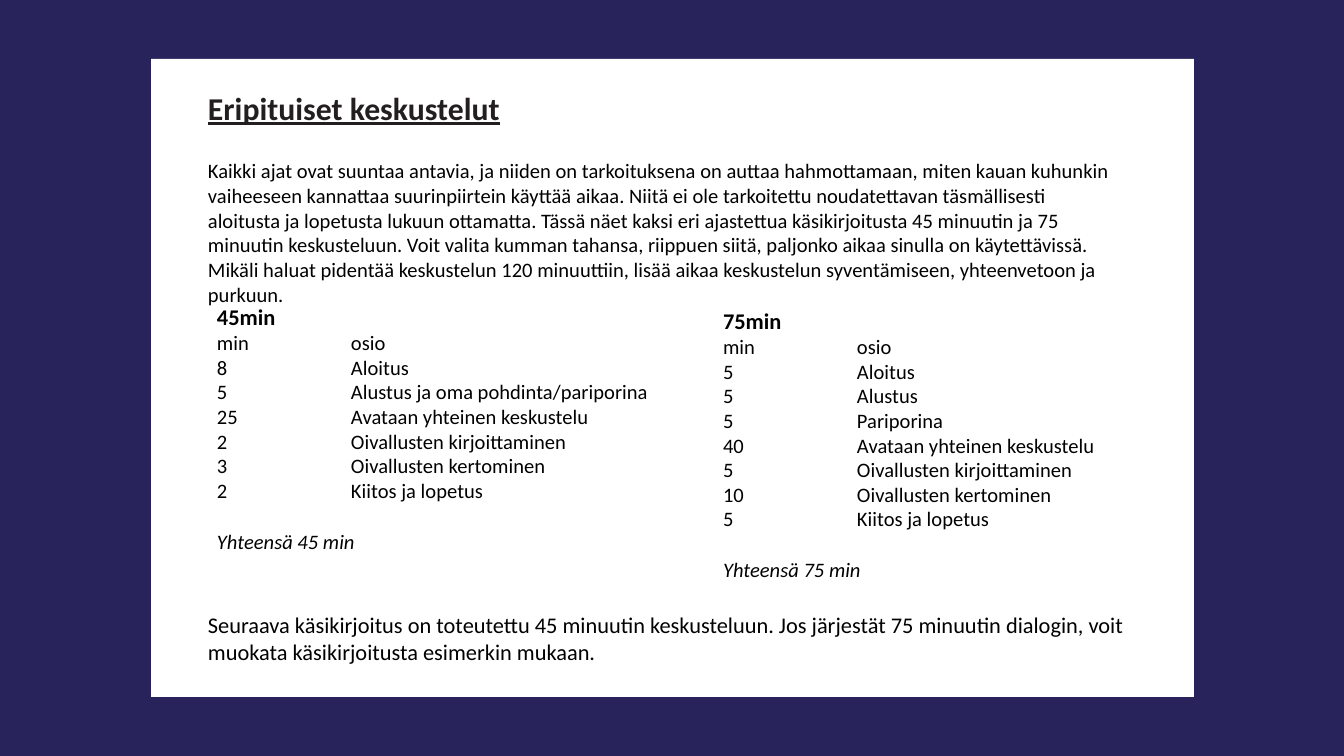
"""Build the slide that compares the 45 and 75 minute discussion timetables."""
from lxml import etree
from pptx import Presentation
from pptx.dml.color import RGBColor
from pptx.enum.shapes import MSO_SHAPE
from pptx.oxml.ns import qn
from pptx.util import Emu, Pt

RECTANGLE = MSO_SHAPE.RECTANGLE
PX = 914400 / 134.4
NAVY, WHITE, BLACK, CHARCOAL = "29235C", "FFFFFF", "000000", "231F20"


def color(hex_value):
    return RGBColor.from_string(hex_value)


def add_text(box, lines):
    left, top, width, height = (Emu(round(n * PX)) for n in box)
    frame = slide.shapes.add_textbox(left, top, width, height).text_frame
    frame.word_wrap = True
    frame.margin_left = frame.margin_right = Emu(round(21 * PX))
    frame.margin_top = frame.margin_bottom = Emu(round(10 * PX))
    for index, (text, size, style) in enumerate(lines):
        paragraph = frame.add_paragraph() if index else frame.paragraphs[0]
        paragraph.text = text
        paragraph.line_spacing = style.get("spacing")
        paragraph.space_before = Pt(style.get("before", 0))
        if "\t" in text:
            tabs = etree.SubElement(paragraph._p.get_or_add_pPr(), qn("a:tabLst"))
            etree.SubElement(tabs, qn("a:tab"), pos=str(round(134 * PX)), algn="l")
        font = paragraph.font
        font.name = "Calibri"
        font.size = Pt(size)
        font.bold = style.get("bold", False)
        font.italic = style.get("italic", False)
        font.underline = style.get("underline", False)
        font.color.rgb = color(style.get("color", BLACK))


presentation = Presentation()
presentation.slide_width = Emu(round(1344 * PX))
presentation.slide_height = Emu(round(756 * PX))
slide = presentation.slides.add_slide(presentation.slide_layouts[6])

for box, fill in [((0, 0, 1344, 756), NAVY), ((151, 59, 1043, 638), WHITE)]:
    panel = slide.shapes.add_shape(RECTANGLE, *(Emu(round(n * PX)) for n in box))
    panel.shadow.inherit = False
    panel.fill.solid()
    panel.fill.fore_color.rgb = color(fill)
    panel.line.fill.background()

introduction = (
    "Kaikki ajat ovat suuntaa antavia, ja niiden on tarkoituksena on auttaa "
    "hahmottamaan, miten kauan kuhunkin vaiheeseen kannattaa suurinpiirtein "
    "käyttää aikaa. Niitä ei ole tarkoitettu noudatettavan täsmällisesti "
    "aloitusta ja lopetusta lukuun ottamatta. Tässä näet kaksi eri ajastettua "
    "käsikirjoitusta 45 minuutin ja 75 minuutin keskusteluun. Voit valita kumman "
    "tahansa, riippuen siitä, paljonko aikaa sinulla on käytettävissä. Mikäli "
    "haluat pidentää keskustelun 120 minuuttiin, lisää aikaa keskustelun "
    "syventämiseen, yhteenvetoon ja purkuun."
)
add_text((187, 73, 950, 243), [
    ("Eripituiset keskustelut", 17,
     {"bold": True, "underline": True, "color": CHARCOAL, "spacing": 1.15}),
    (introduction, 11, {"before": 17}),
])

timetables = [
    (45, (196, 293, 655, 633), [
        (8, "Aloitus"),
        (5, "Alustus ja oma pohdinta/pariporina"),
        (25, "Avataan yhteinen keskustelu"),
        (2, "Oivallusten kirjoittaminen"),
        (3, "Oivallusten kertominen"),
        (2, "Kiitos ja lopetus"),
    ]),
    (75, (702, 297, 435, 633), [
        (5, "Aloitus"),
        (5, "Alustus"),
        (5, "Pariporina"),
        (40, "Avataan yhteinen keskustelu"),
        (5, "Oivallusten kirjoittaminen"),
        (10, "Oivallusten kertominen"),
        (5, "Kiitos ja lopetus"),
    ]),
]
for total, box, parts in timetables:
    rows = [("min", "osio")] + parts
    add_text(box, [
        (f"{total}min", 12, {"bold": True}),
        *((f"{minutes}\t{part}", 11, {}) for minutes, part in rows),
        (f"Yhteensä {total} min", 11, {"italic": True, "before": 14}),
    ])

add_text((187, 601, 972, 633), [
    ("Seuraava käsikirjoitus on toteutettu 45 minuutin keskusteluun. Jos järjestät "
     "75 minuutin dialogin, voit muokata käsikirjoitusta esimerkin mukaan.", 12, {}),
])

presentation.save("out.pptx")
